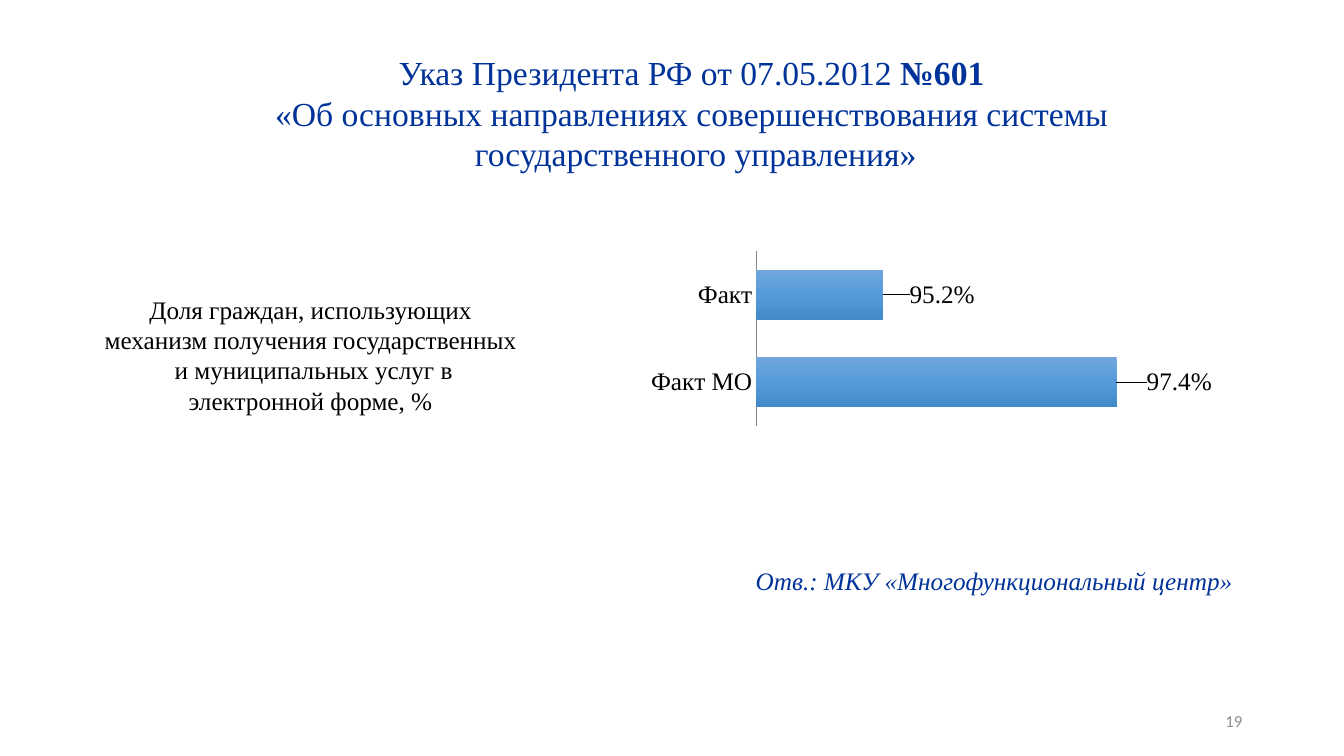
import copy

import pptx
import pptx.chart.data
import pptx.dml.color
import pptx.enum.chart
import pptx.enum.text
import pptx.oxml
import pptx.util
from pptx.util import Inches

SERIF = "Times New Roman"
NAVY = "003399"
BLACK = "000000"
BAR_SHADES = ("71A6DB", "559BDB", "438AC9")
PERCENT = "0.0%"
SHARES = {"Факт МО": 0.974, "Факт": 0.952}
LABEL_SHIFTS = (0.04, 0.034)
PLOT_AREA = {"x": 0.197, "y": 0.108, "w": 0.647, "h": 0.639}


def rgb(value):
    """Return the colour for a hex string."""
    return pptx.dml.color.RGBColor.from_string(value)


def apply(target, formats):
    """Set every attribute in a dict of format values."""
    for key, value in formats.items():
        setattr(target, key, value)


def style_font(font, size, color, **extras):
    """Give a font its size in points, colour and other values."""
    apply(font, {"name": SERIF, "size": pptx.util.Pt(size), **extras})
    font.color.rgb = rgb(color)


def add_text(slide, box, runs, size, color, align="CENTER", anchor="TOP", **extras):
    """Add one paragraph of (text, bold) runs, breaking lines at newlines."""
    frame = slide.shapes.add_textbox(*map(Inches, box)).text_frame
    apply(frame, {
        "word_wrap": True,
        "auto_size": pptx.enum.text.MSO_AUTO_SIZE.NONE,
        "vertical_anchor": getattr(pptx.enum.text.MSO_ANCHOR, anchor),
    })
    paragraph = frame.paragraphs[0]
    paragraph.alignment = getattr(pptx.enum.text.PP_ALIGN, align)
    for text, bold in runs:
        for index, line in enumerate(text.split("\n")):
            if index:
                paragraph.add_line_break()
            if line:
                run = paragraph.add_run()
                run.text = line
                style_font(run.font, size, color, bold=bold, **extras)


def manual_layout(values, inner=False):
    """Build a manual chart layout from position fractions."""
    namespace = "http://schemas.openxmlformats.org/drawingml/2006/chart"
    settings = {"layoutTarget": "inner", "xMode": "edge", "yMode": "edge"} if inner else {}
    body = "".join(f'<c:{tag} val="{value}"/>' for tag, value in {**settings, **values}.items())
    return pptx.oxml.parse_xml(
        f'<c:layout xmlns:c="{namespace}"><c:manualLayout>{body}</c:manualLayout></c:layout>')


def shade_bars(chart):
    """Fill the bars with a downward gradient."""
    fill = chart.plots[0].series[0].format.fill
    fill.gradient()
    fill.gradient_angle = 270
    stops = chart.element.xpath(".//c:ser/c:spPr//a:gsLst")[0]
    stops.insert(1, copy.deepcopy(stops[0]))
    for index, (stop, shade) in enumerate(zip(fill.gradient_stops, BAR_SHADES)):
        stop.color.rgb = rgb(shade)
        stop.position = index / 2


def label_bars(chart):
    """Show percentages a little to the right of the bars."""
    series = chart.plots[0].series[0]
    outside = pptx.enum.chart.XL_LABEL_POSITION.OUTSIDE_END
    apply(series.data_labels, {
        "show_value": True, "number_format": PERCENT,
        "number_format_is_linked": False, "position": outside,
    })
    style_font(series.data_labels.font, 18, BLACK)
    for index in range(len(SHARES)):
        label = series.points[index].data_label
        label.position = outside
        style_font(label.font, 18, BLACK)
    for label, shift in zip(chart.element.xpath(".//c:ser/c:dLbls/c:dLbl"), LABEL_SHIFTS):
        label.xpath("c:idx")[0].addnext(manual_layout({"x": shift, "y": 0}))


def add_share_chart(slide, box):
    """Add the bar chart of shares."""
    data = pptx.chart.data.CategoryChartData(number_format=PERCENT)
    data.categories = list(SHARES)
    data.add_series("Series 1", SHARES.values())
    chart = slide.shapes.add_chart(
        pptx.enum.chart.XL_CHART_TYPE.BAR_CLUSTERED, *map(Inches, box), data).chart
    apply(chart, {"has_legend": False, "has_title": False})
    style_font(chart.font, 18, BLACK, name="Calibri")
    no_ticks = pptx.enum.chart.XL_TICK_MARK.NONE
    apply(chart.category_axis, {"major_tick_mark": no_ticks, "minor_tick_mark": no_ticks})
    style_font(chart.category_axis.tick_labels.font, 18, BLACK)
    chart.category_axis.format.line.color.rgb = rgb("878787")
    apply(chart.value_axis, {
        "visible": False, "has_major_gridlines": False,
        "minimum_scale": 0.94, "maximum_scale": 0.98,
    })
    apply(chart.plots[0], {"gap_width": 75, "vary_by_categories": False})
    shade_bars(chart)
    label_bars(chart)
    area = chart.element.xpath("c:chart/c:plotArea")[0]
    for layout in area.xpath("c:layout"):
        area.remove(layout)
    area.insert(0, manual_layout(PLOT_AREA, inner=True))


def main():
    """Build the slide and save it."""
    deck = pptx.Presentation()
    apply(deck, {"slide_width": Inches(13.33), "slide_height": Inches(7.5)})
    slide = deck.slides.add_slide(deck.slide_layouts[6])
    add_text(slide, (9.42, 6.95, 3, 0.4), [("19", False)], 12, "8C8C8C",
             align="RIGHT", anchor="MIDDLE", name="Calibri")
    indicator = ("Доля граждан, использующих механизм получения государственных\n"
                 " и муниципальных услуг в электронной форме, %")
    add_text(slide, (0.87, 2.87, 4.42, 1.31), [(indicator, False)], 18, BLACK)
    add_share_chart(slide, (6.22, 2.2, 6.5, 2.71))
    add_text(slide, (7.12, 5.56, 5.48, 0.4),
             [("Отв.: МКУ «Многофункциональный центр»", False)], 18, NAVY, italic=True)
    decree = [
        ("Указ Президента РФ от 07.05.2012 ", False),
        ("№601 \n", True),
        ("«Об основных направлениях совершенствования системы \n"
         "государственного управления»", False),
    ]
    add_text(slide, (0.69, 0.47, 12.42, 1.31), decree, 24, NAVY)
    deck.save("out.pptx")


if __name__ == "__main__":
    main()
